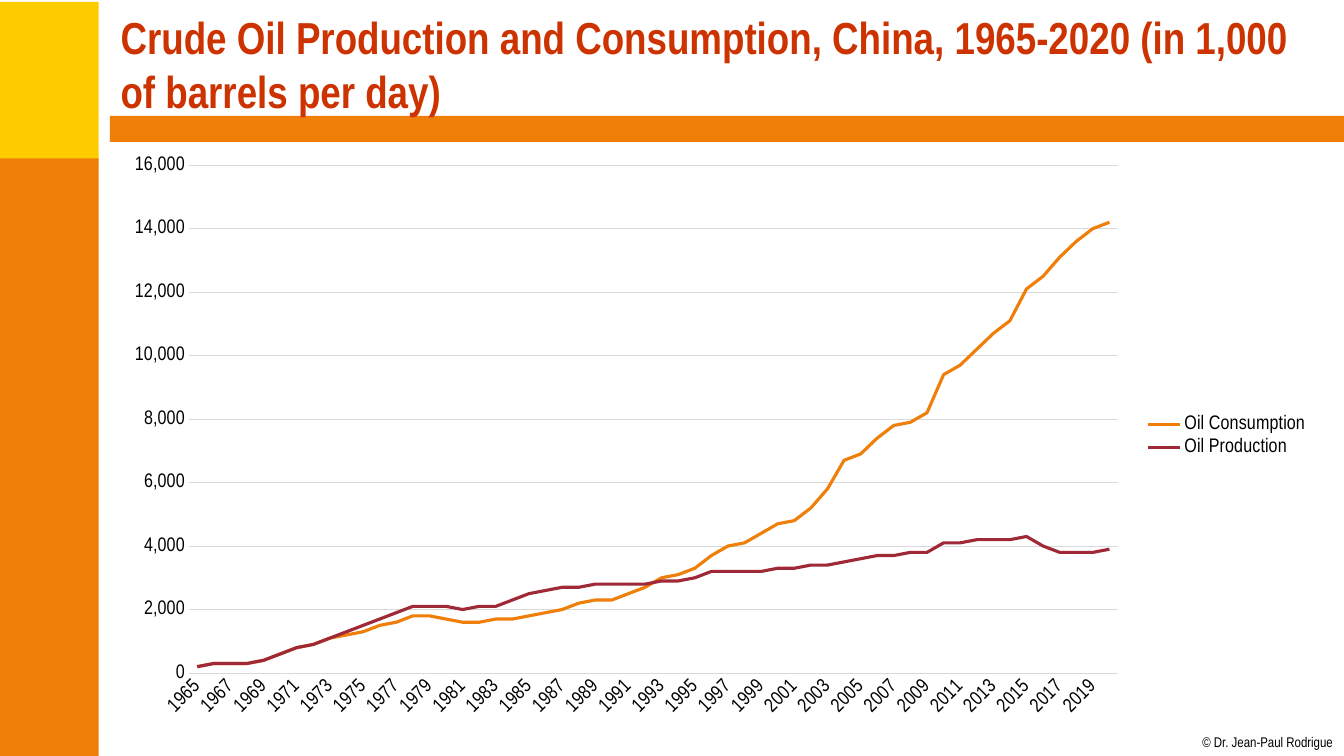
"""Build the slide on crude oil production and consumption in China."""
from lxml import etree
from pptx import Presentation, util as u
from pptx.chart.data import CategoryChartData
from pptx.dml.color import RGBColor
from pptx.enum import chart as ch, shapes, text
from pptx.oxml.ns import qn

FONT = "Arial Narrow"
ORANGE, YELLOW, WINE, RED, BLACK, GREY = "F07F09", "FFCC00", "9F2936", "CC3300", "000000", "D9D9D9"

BANDS = [
    ((-0.05, 0.05, 2.54, 4.01), YELLOW),
    ((-0.05, 3.99, 2.54, 15.06), ORANGE),
    ((2.77, 2.92, 31.1, 0.66), ORANGE),
]
CREDIT = {
    "words": "© Dr. Jean-Paul Rodrigue",
    "place": (30.3, 18.49, 3.33, 0.43),
    "font": {"size": u.Pt(10), "name": FONT},
    "color": BLACK,
    "frame": {"word_wrap": False, "margin_left": 0, "margin_right": 0,
              "margin_top": 0, "margin_bottom": 0},
}
TITLE = {
    "words": "Crude Oil Production and Consumption, China, 1965-2020 (in 1,000 of barrels per day)",
    "place": (2.79, 0.28, 30.48, 2.64),
    "font": {"size": u.Pt(32), "name": FONT, "bold": True},
    "color": RED,
    "frame": {"word_wrap": True, "vertical_anchor": text.MSO_ANCHOR.MIDDLE},
}
CHART_PLACE = (2.79, 3.63, 30.48, 14.71)
CHART_FONT = {"size": u.Pt(14), "name": FONT}
YEARS = range(1965, 2021)
OIL = {
    "Oil Consumption": (ORANGE, [
        200, 300, 300, 300, 400, 600, 800, 900, 1100, 1200, 1300, 1500, 1600, 1800,
        1800, 1700, 1600, 1600, 1700, 1700, 1800, 1900, 2000, 2200, 2300, 2300, 2500, 2700,
        3000, 3100, 3300, 3700, 4000, 4100, 4400, 4700, 4800, 5200, 5800, 6700, 6900, 7400,
        7800, 7900, 8200, 9400, 9700, 10200, 10700, 11100, 12100, 12500, 13100, 13600,
        14000, 14200]),
    "Oil Production": (WINE, [
        200, 300, 300, 300, 400, 600, 800, 900, 1100, 1300, 1500, 1700, 1900, 2100,
        2100, 2100, 2000, 2100, 2100, 2300, 2500, 2600, 2700, 2700, 2800, 2800, 2800, 2800,
        2900, 2900, 3000, 3200, 3200, 3200, 3200, 3300, 3300, 3400, 3400, 3500, 3600, 3700,
        3700, 3800, 3800, 4100, 4100, 4200, 4200, 4200, 4300, 4000, 3800, 3800, 3800, 3900]),
}


def paint(color_format, color):
    color_format.rgb = RGBColor.from_string(color)


def apply(target, values):
    for name, value in values.items():
        setattr(target, name, value)


def cm(place):
    return [u.Cm(length) for length in place]


def draw_line(line, color, points):
    paint(line.color, color)
    line.width = u.Pt(points)


def add_band(slide, place, color):
    band = slide.shapes.add_shape(shapes.MSO_SHAPE.RECTANGLE, *cm(place))
    band.shadow.inherit = False
    band.fill.solid()
    paint(band.fill.fore_color, color)
    band.line.fill.background()


def add_words(slide, part):
    frame = slide.shapes.add_textbox(*cm(part["place"])).text_frame
    apply(frame, part["frame"])
    run = frame.paragraphs[0].add_run()
    run.text = part["words"]
    apply(run.font, part["font"])
    paint(run.font.color, part["color"])


def add_oil_chart(slide):
    data = CategoryChartData(number_format="#,##0")
    data.categories = [str(year) for year in YEARS]
    for name, (_, barrels) in OIL.items():
        data.add_series(name, barrels)
    chart = slide.shapes.add_chart(ch.XL_CHART_TYPE.LINE, *cm(CHART_PLACE), data).chart
    apply(chart, {"has_title": False, "has_legend": True})
    apply(chart.legend, {"position": ch.XL_LEGEND_POSITION.RIGHT, "include_in_layout": False})
    years, barrels = chart.category_axis, chart.value_axis
    for font in (chart.font, chart.legend.font, years.tick_labels.font, barrels.tick_labels.font):
        apply(font, CHART_FONT)
        paint(font.color, BLACK)

    for axis in (years, barrels):
        apply(axis, {"major_tick_mark": ch.XL_TICK_MARK.NONE,
                     "minor_tick_mark": ch.XL_TICK_MARK.NONE})
    draw_line(years.format.line, GREY, 0.75)
    year_xml = years._element
    year_xml.find(qn("c:txPr")).find(qn("a:bodyPr")).set("rot", "-2700000")
    skip = etree.Element(qn("c:tickLblSkip"), val="2")
    year_xml.find(qn("c:noMultiLvlLbl")).addprevious(skip)

    apply(barrels, {"has_major_gridlines": True, "minimum_scale": 0,
                    "maximum_scale": 16000, "major_unit": 2000})
    apply(barrels.tick_labels, {"number_format": "#,##0", "number_format_is_linked": False})
    barrels.format.line.fill.background()
    draw_line(barrels.major_gridlines.format.line, GREY, 0.75)

    plot = chart.plots[0]
    plot.vary_by_categories = False
    for series, (color, _) in zip(plot.series, OIL.values()):
        series.smooth = False
        series.marker.style = ch.XL_MARKER_STYLE.NONE
        draw_line(series.format.line, color, 2.25)


def main():
    deck = Presentation()
    apply(deck, {"slide_width": u.Cm(33.87), "slide_height": u.Cm(19.05)})
    slide = deck.slides.add_slide(deck.slide_layouts[6])
    for place, color in BANDS:
        add_band(slide, place, color)
    for part in (CREDIT, TITLE):
        add_words(slide, part)
    add_oil_chart(slide)
    deck.save("out.pptx")


if __name__ == "__main__":
    main()
